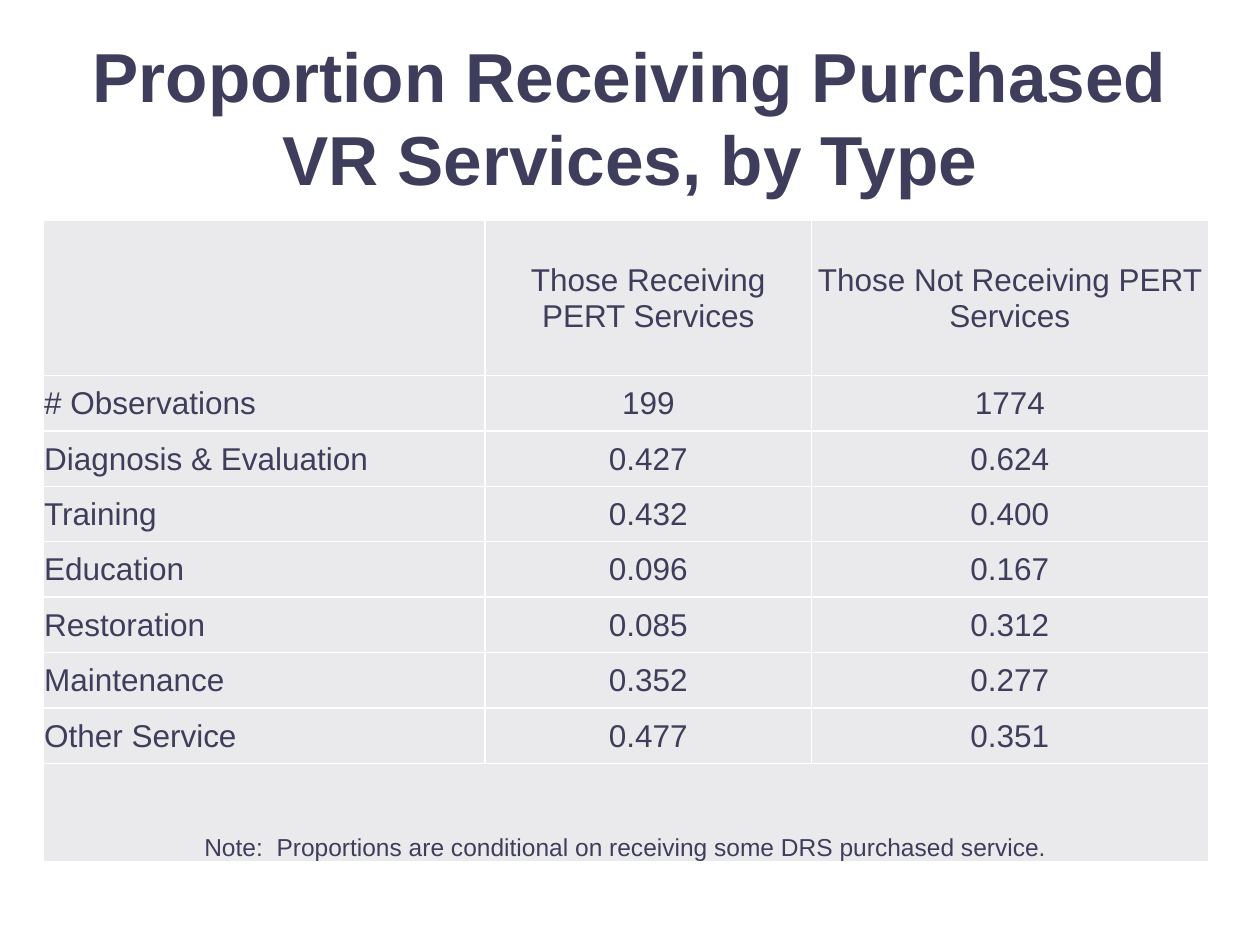
from lxml.etree import SubElement
from pptx import Presentation
from pptx.dml.color import RGBColor
from pptx.enum.text import MSO_ANCHOR, PP_ALIGN
from pptx.oxml.ns import qn
from pptx.util import Inches, Pt

TITLE = "Proportion Receiving Purchased VR Services, by Type"
ROWS = [
    ("", "Those Receiving PERT Services", "Those Not Receiving PERT Services"),
    ("# Observations", "199", "1774"),
    ("Diagnosis & Evaluation", "0.427", "0.624"),
    ("Training", "0.432", "0.400"),
    ("Education", "0.096", "0.167"),
    ("Restoration", "0.085", "0.312"),
    ("Maintenance", "0.352", "0.277"),
    ("Other Service", "0.477", "0.351"),
]
NOTE = "Note:  Proportions are conditional on receiving some DRS purchased service."

INK, PANEL, RULE = "3E3E5C", "EAEAEC", "FFFFFF"
COLUMN_WIDTHS = [3.51, 2.59, 3.15]
HEADER_HEIGHT, ROW_HEIGHT, NOTE_HEIGHT = 1.23, 0.44, 0.78
ROW_HEIGHTS = [HEADER_HEIGHT] + [ROW_HEIGHT] * (len(ROWS) - 1) + [NOTE_HEIGHT]


def color(value):
    return RGBColor.from_string(value)


def write(frame, text, size=18, bold=False, align=PP_ALIGN.CENTER):
    para = frame.paragraphs[0]
    para.alignment = align
    span = para.add_run()
    span.text = text
    span.font.name = "Arial"
    span.font.size = Pt(size)
    span.font.bold = bold
    span.font.color.rgb = color(INK)


def style_cell(cell, anchor=MSO_ANCHOR.MIDDLE):
    cell.vertical_anchor = anchor
    cell.margin_left = cell.margin_right = cell.margin_top = Inches(0.01)
    cell.margin_bottom = 0
    properties = cell._tc.get_or_add_tcPr()
    for side in ("lnL", "lnR", "lnT", "lnB"):
        line = SubElement(properties, qn(f"a:{side}"), w=str(Pt(1)))
        fill = SubElement(line, qn("a:solidFill"))
        SubElement(fill, qn("a:srgbClr"), val=RULE)
    cell.fill.solid()
    cell.fill.fore_color.rgb = color(PANEL)


def add_title(page):
    box = page.shapes.add_textbox(Inches(0.5), Inches(0.3), Inches(9), Inches(1.25))
    box.text_frame.word_wrap = True
    box.text_frame.vertical_anchor = MSO_ANCHOR.MIDDLE
    write(box.text_frame, TITLE, size=39.6, bold=True)


def add_services_table(page):
    table = page.shapes.add_table(
        len(ROW_HEIGHTS), len(COLUMN_WIDTHS), Inches(0.34), Inches(1.75),
        Inches(sum(COLUMN_WIDTHS)), Inches(sum(ROW_HEIGHTS))).table
    table.first_row = table.horz_banding = False
    for column, width in zip(table.columns, COLUMN_WIDTHS):
        column.width = Inches(width)
    for row, height in zip(table.rows, ROW_HEIGHTS):
        row.height = Inches(height)

    for row, texts in enumerate(ROWS):
        for column, text in enumerate(texts):
            cell = table.cell(row, column)
            style_cell(cell)
            if text:
                write(cell.text_frame, text,
                      align=PP_ALIGN.CENTER if column else PP_ALIGN.LEFT)

    last = len(ROWS)
    for column in range(len(COLUMN_WIDTHS)):
        style_cell(table.cell(last, column), anchor=MSO_ANCHOR.BOTTOM)
    note = table.cell(last, 0)
    note.merge(table.cell(last, len(COLUMN_WIDTHS) - 1))
    write(note.text_frame, NOTE, size=14)


def main():
    deck = Presentation()
    deck.slide_width, deck.slide_height = Inches(10), Inches(7.5)
    page = deck.slides.add_slide(deck.slide_layouts[6])
    add_title(page)
    add_services_table(page)
    deck.save("out.pptx")


if __name__ == "__main__":
    main()
